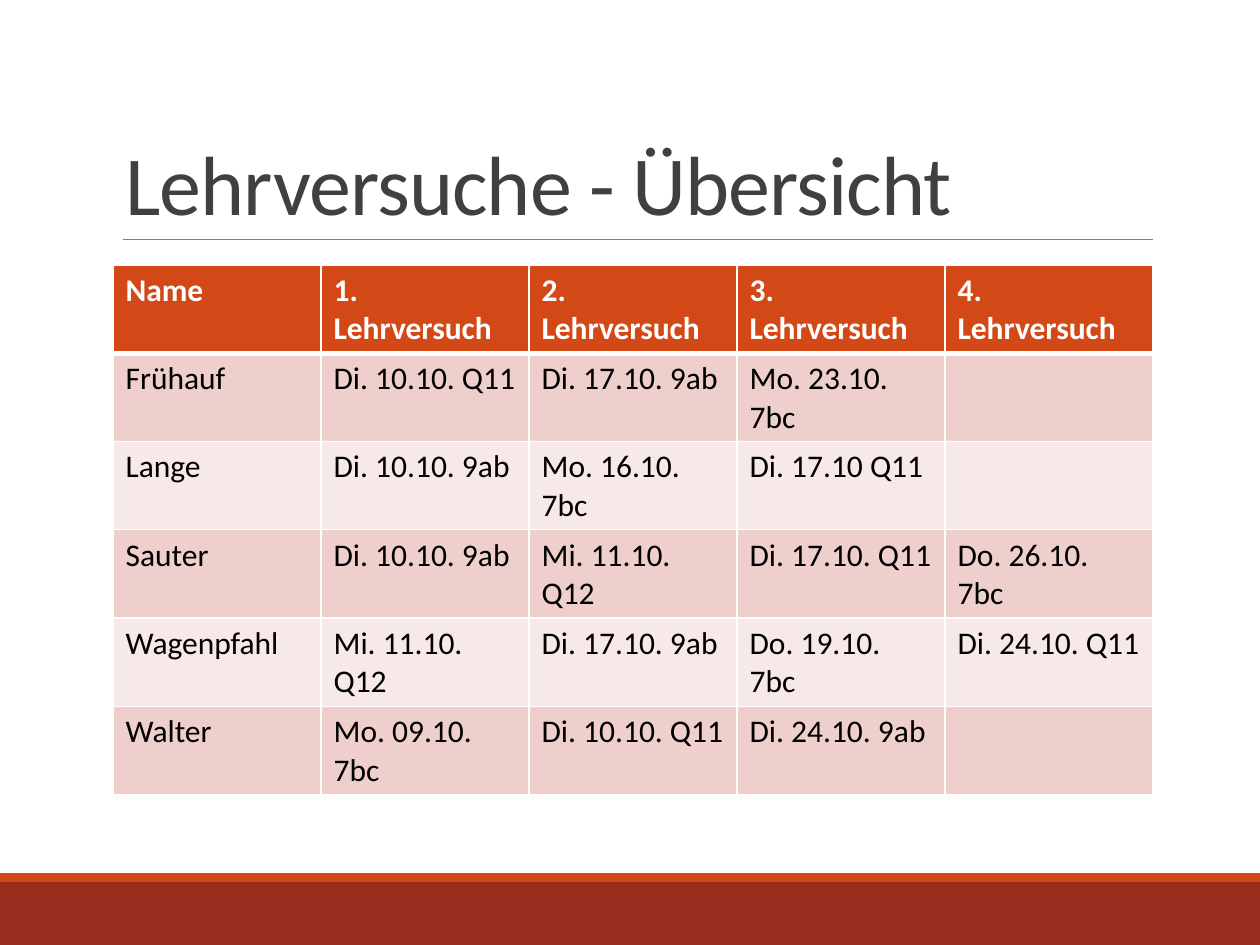
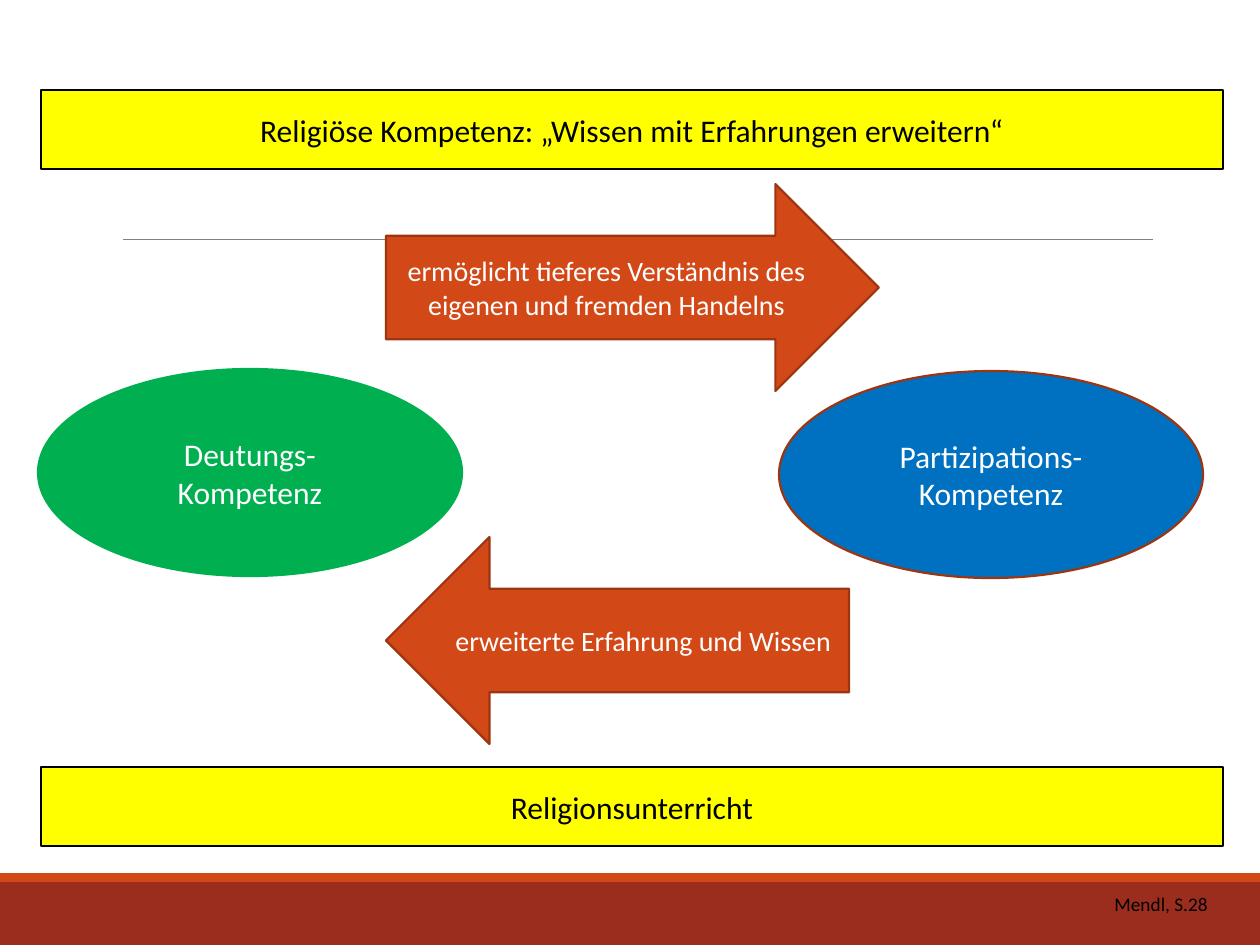
import lxml.etree
import pptx
import pptx.dml.color
import pptx.enum.shapes
import pptx.enum.text
import pptx.oxml.ns
import pptx.util

PX = 914400 / 126
FONT = "Calibri"
RUST, BRICK, EDGE = "D34817", "9B2D1F", "9C3511"
WHITE, BLACK, YELLOW = "FFFFFF", "000000", "FFFF00"
GREEN, BLUE, DARK, GRAY = "00B050", "0070C0", "404040", "808080"
STRIPES = "EFCFCC", "F7E9E8"

SHAPE = pptx.enum.shapes.MSO_SHAPE
ALIGN = pptx.enum.text.PP_ALIGN
ANCHOR = pptx.enum.text.MSO_ANCHOR
qn = pptx.oxml.ns.qn

HEAD = ["Name"] + [f"{n}. Lehrversuch" for n in range(1, 5)]
ROWS = [
    ["Frühauf", "Di. 10.10. Q11", "Di. 17.10. 9ab", "Mo. 23.10. 7bc", ""],
    ["Lange", "Di. 10.10. 9ab", "Mo. 16.10. 7bc", "Di. 17.10 Q11", ""],
    ["Sauter", "Di. 10.10. 9ab", "Mi. 11.10. Q12", "Di. 17.10. Q11", "Do. 26.10. 7bc"],
    ["Wagenpfahl", "Mi. 11.10. Q12", "Di. 17.10. 9ab", "Do. 19.10. 7bc", "Di. 24.10. Q11"],
    ["Walter", "Mo. 09.10. 7bc", "Di. 10.10. Q11", "Di. 24.10. 9ab", ""],
]


def emu(*sizes):
    return [round(size * PX) for size in sizes]


def color(code):
    return pptx.dml.color.RGBColor.from_string(code)


def paint(item, code):
    item.fill.solid()
    item.fill.fore_color.rgb = color(code)


def style(frame, size, code, bold=False, align=None):
    for par in frame.paragraphs:
        par.alignment = align
        for run in par.runs:
            run.font.name = FONT
            run.font.size = pptx.util.Pt(size)
            run.font.bold = bold
            run.font.color.rgb = color(code)


def add_form(slide, kind, box, fill, line=None, text="", size=18, ink=WHITE):
    form = slide.shapes.add_shape(kind, *emu(*box))
    form.shadow.inherit = False
    paint(form, fill)
    if line:
        form.line.color.rgb = color(line)
        form.line.width = pptx.util.Pt(1.25)
    else:
        form.line.fill.background()
    if text:
        frame = form.text_frame
        frame.text = text
        frame.word_wrap = True
        frame.vertical_anchor = ANCHOR.MIDDLE
        style(frame, size, ink, align=ALIGN.CENTER)


def add_base(deck):
    """Add a blank slide with the footer bands and the title rule."""
    slide = deck.slides.add_slide(deck.slide_layouts[6])
    add_form(slide, SHAPE.RECTANGLE, (0, 882, 1260, 63), BRICK)
    add_form(slide, SHAPE.RECTANGLE, (0, 873, 1260, 9), RUST)
    rule = slide.shapes.add_connector(
        pptx.enum.shapes.MSO_CONNECTOR.STRAIGHT, *emu(123, 239, 1153, 239))
    rule.line.color.rgb = color(GRAY)
    rule.line.width = pptx.util.Pt(0.5)
    lxml.etree.SubElement(rule._element.spPr, qn("a:effectLst"))
    return slide


def add_title(slide, box, text):
    frame = slide.shapes.add_textbox(*emu(*box)).text_frame
    frame.text = text
    frame.word_wrap = True
    frame.vertical_anchor = ANCHOR.BOTTOM
    style(frame, 48, DARK)
    par = frame.paragraphs[0]
    par.line_spacing = 0.85
    par.runs[0].font._element.set("spc", "-50")


def add_edges(cell, top, bottom):
    props = cell._tc.get_or_add_tcPr()
    for side, width in zip("LRTB", (1, 1, top, bottom)):
        edge = lxml.etree.SubElement(
            props, qn(f"a:ln{side}"), w=str(pptx.util.Pt(width)))
        fill = lxml.etree.SubElement(edge, qn("a:solidFill"))
        lxml.etree.SubElement(fill, qn("a:srgbClr"), val=WHITE)


def add_plan(slide, box):
    """Add the schedule; its rows grow with their text."""
    rows = [HEAD] + ROWS
    grid = slide.shapes.add_table(len(rows), len(HEAD), *emu(*box)).table
    for r, row in enumerate(rows):
        first = r == 0
        for c, text in enumerate(row):
            cell = grid.cell(r, c)
            cell.text = text
            style(cell.text_frame, 18, WHITE if first else BLACK, bold=first)
            add_edges(cell, 3 if r == 1 else 1, 3 if first else 1)
            paint(cell, RUST if first else STRIPES[(r - 1) % 2])


def add_cycle(slide, box):
    """Add two competences joined by an arrow each way."""
    left, top, width, height = box
    oval_w, form_h, start = 424, 207, left + 348
    add_form(slide, SHAPE.OVAL, (left, top + 185, oval_w, form_h),
             GREEN, GREEN, "Deutungs-Kompetenz")
    add_form(slide, SHAPE.OVAL, (left + width - oval_w, top + 187, oval_w, form_h),
             BLUE, EDGE, "Partizipations-Kompetenz")
    add_form(slide, SHAPE.RIGHT_ARROW, (start, top, 493, form_h), RUST, EDGE,
             "ermöglicht tieferes Verständnis des eigenen und fremden Handelns", 16)
    add_form(slide, SHAPE.LEFT_ARROW, (start, top + height - form_h, 463, form_h),
             RUST, EDGE, "erweiterte Erfahrung und Wissen", 16)


def add_bar(slide, top, text):
    add_form(slide, SHAPE.RECTANGLE, (41, top, 1182, 79), YELLOW, BLACK, text, ink=BLACK)


def add_credit(slide, box, text):
    frame = slide.shapes.add_textbox(*emu(*box)).text_frame
    frame.text = text
    frame.word_wrap = False
    style(frame, 11, BLACK)


def main():
    deck = pptx.Presentation()
    deck.slide_width, deck.slide_height = emu(1260, 945)

    slide = add_base(deck)
    add_title(slide, (113, 39, 1040, 200), "Lehrversuche - Übersicht")
    add_plan(slide, (113, 265, 1040, 312))

    slide = add_base(deck)
    add_cycle(slide, (38, 184, 1165, 560))
    add_bar(slide, 767, "Religionsunterricht")
    add_bar(slide, 90, "Religiöse Kompetenz: „Wissen mit Erfahrungen erweitern“")
    add_credit(slide, (1102, 886, 130, 36), "Mendl, S.28")

    deck.save("out.pptx")


if __name__ == "__main__":
    main()
